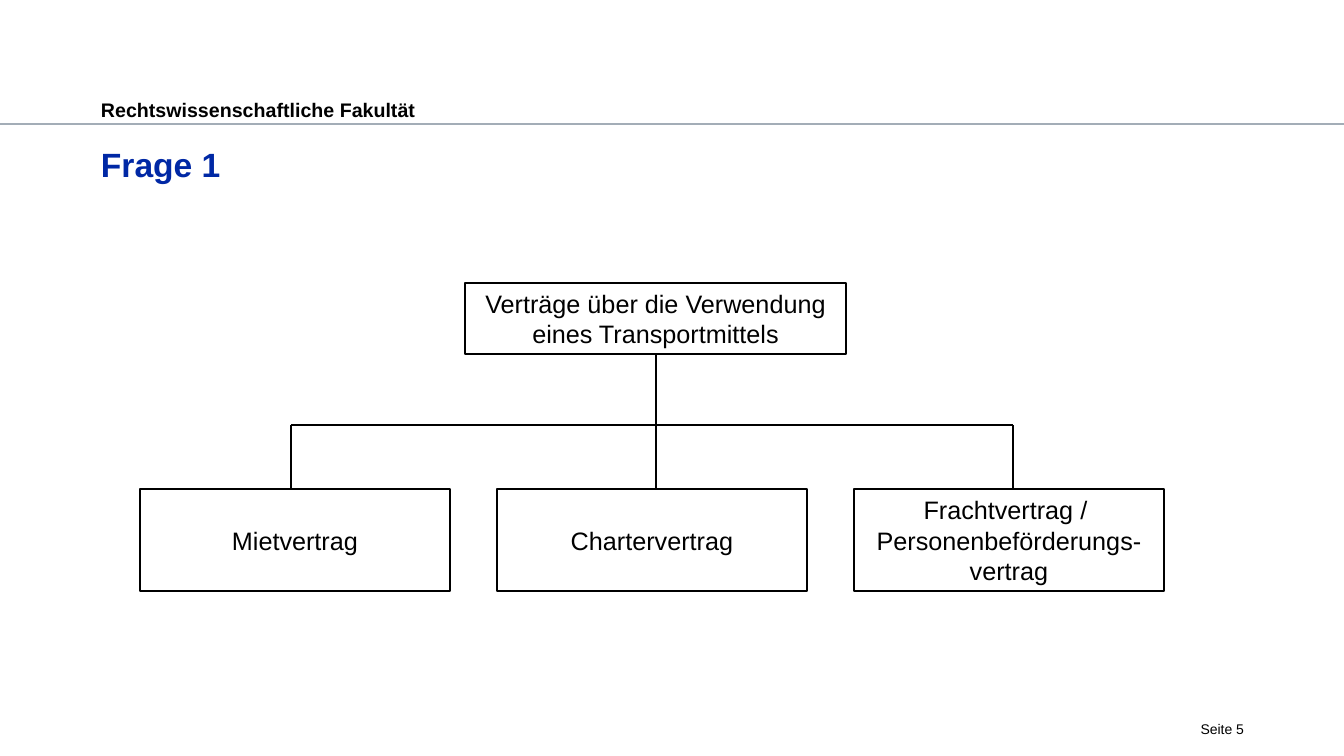
from lxml import etree
from pptx import Presentation
from pptx.dml.color import RGBColor
from pptx.enum.shapes import MSO_CONNECTOR, MSO_SHAPE
from pptx.enum.text import MSO_ANCHOR, PP_ALIGN
from pptx.oxml.ns import qn
from pptx.util import Pt

STRAIGHT, RECTANGLE = MSO_CONNECTOR.STRAIGHT, MSO_SHAPE.RECTANGLE
TOP, MIDDLE = MSO_ANCHOR.TOP, MSO_ANCHOR.MIDDLE
LEFT, CENTER, RIGHT = PP_ALIGN.LEFT, PP_ALIGN.CENTER, PP_ALIGN.RIGHT
PX = 914400 / 100.8
BLACK, BLUE, GREY = "000000", "0028A5", "A3ADB7"

prs = Presentation()
prs.slide_width, prs.slide_height = round(1344 * PX), round(756 * PX)
slide = prs.slides.add_slide(prs.slide_layouts[6])


def add_text(text, box, size=18, color=BLACK, bold=False, align=LEFT,
             anchor=TOP, insets=(0, 4, 0, 0), outlined=False):
    place = [round(v * PX) for v in box]
    if outlined:
        shape = slide.shapes.add_shape(RECTANGLE, *place)
        shape.shadow.inherit = False
        shape.fill.background()
        shape.line.color.rgb = RGBColor.from_string(BLACK)
        shape.line.width = Pt(1)
    else:
        shape = slide.shapes.add_textbox(*place)
    frame = shape.text_frame
    frame.word_wrap = True
    frame.vertical_anchor = anchor
    (frame.margin_left, frame.margin_top,
     frame.margin_right, frame.margin_bottom) = [round(v * PX) for v in insets]
    paragraph = frame.paragraphs[0]
    paragraph.text = text
    paragraph.alignment = align
    for run in paragraph.runs:
        run.font.name = "Arial"
        run.font.size = Pt(size)
        run.font.bold = bold
        run.font.color.rgb = RGBColor.from_string(color)


def add_line(x1, y1, x2, y2, color=BLACK, width=1):
    line = slide.shapes.add_connector(
        STRAIGHT, *[round(v * PX) for v in (x1, y1, x2, y2)])
    line.line.color.rgb = RGBColor.from_string(color)
    line.line.width = Pt(width)
    etree.SubElement(line._element.spPr, qn("a:effectLst"))


add_line(0, 124, 1344, 124, color=GREY, width=1.25)
add_text("Rechtswissenschaftliche Fakultät", (101, 94, 808, 25), size=14, bold=True)
add_text("Frage 1", (101, 140, 1143, 88), size=24, color=BLUE, bold=True)
add_text("Seite 5", (1152, 720, 92, 24), size=10, align=RIGHT, insets=(0, 0, 0, 0))

node_format = dict(align=CENTER, anchor=MIDDLE, insets=(10, 5, 10, 5), outlined=True)
add_text("Verträge über die Verwendung eines Transportmittels",
         (465, 283, 381, 71), **node_format)

contracts = ["Mietvertrag", "Chartervertrag",
             "Frachtvertrag / \vPersonenbeförderungs-vertrag"]
branches = [291, 656, 1013]
branch_y, contract_y = 425, 489
for column, (contract, branch_x) in enumerate(zip(contracts, branches)):
    add_text(contract, (140 + 357 * column, contract_y, 310, 102), **node_format)
    add_line(branch_x, contract_y, branch_x, branch_y)
add_line(branches[0], branch_y, branches[-1], branch_y)
add_line(branches[1], branch_y, branches[1], 354)

prs.save("out.pptx")
